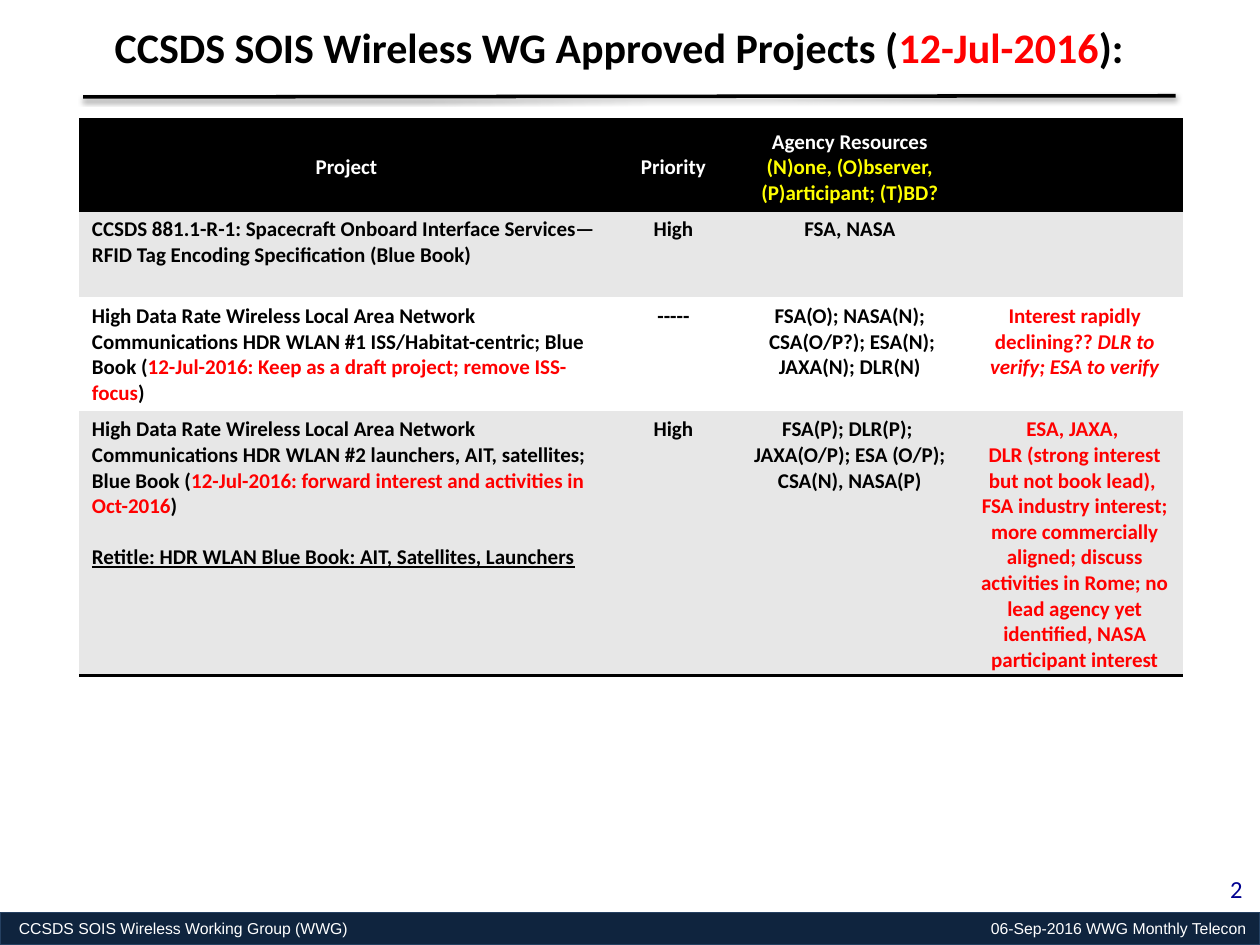
import pptx
import pptx.util
import pptx.dml.color
import pptx.enum.shapes
import pptx.enum.text
import pptx.oxml
import pptx.oxml.ns

Inches = pptx.util.Inches
Pt = pptx.util.Pt
ALIGN = pptx.enum.text.PP_ALIGN
ANCHOR = pptx.enum.text.MSO_ANCHOR
NAMESPACE = pptx.oxml.ns.nsdecls("a")

COLORS = {
    "black": "000000", "white": "FFFFFF", "red": "FF0000", "yellow": "FFFF00",
    "band": "E7E7E7", "navy": "0F243E", "edge": "254061", "number": "000090",
}
NO_STYLE = "{2D5ABB26-0587-4C30-8999-92F81FD0307C}"
COLUMN_WIDTHS = [4.24, 0.95, 1.85, 1.72]
ROW_HEIGHTS = [0.72, 0.69, 0.9, 2.1]

RED = {"color": "red"}
HEADER = [
    [["Project"]],
    [["Priority"]],
    [["Agency Resources"],
     [("(N)one, (O)bserver, (P)articipant; (T)BD?", {"color": "yellow"})]],
    [],
]
PROJECTS = [
    [
        [["CCSDS 881.1-R-1: Spacecraft Onboard Interface Services—"
          "RFID Tag Encoding Specification (Blue Book)"]],
        [["High"]],
        [["FSA, NASA"]],
        [],
    ],
    [
        [["High Data Rate Wireless Local Area Network Communications "
          "HDR WLAN #1 ISS/Habitat-centric; Blue Book (",
          ("12-Jul-2016: Keep as a draft project; remove ISS-focus", RED), ")"]],
        [["-----"]],
        [["FSA(O); NASA(N);"], [" CSA(O/P?); ESA(N); JAXA(N); DLR(N)"]],
        [[("Interest rapidly declining?? ", RED),
          ("DLR to verify; ESA to verify", {"color": "red", "italic": True})]],
    ],
    [
        [["High Data Rate Wireless Local Area Network Communications "
          "HDR WLAN #2 launchers, AIT, satellites; Blue Book (",
          ("12-Jul-2016: forward interest and activities in Oct-2016", RED), ")"],
         [("Retitle: HDR WLAN Blue Book: AIT, Satellites, Launchers",
           {"underline": True})]],
        [["High"]],
        [["FSA(P); DLR(P); "], ["JAXA(O/P); ESA (O/P); CSA(N), NASA(P)"]],
        [[("ESA, JAXA, ", RED)],
         [("DLR (strong interest but not book lead), ", RED)],
         [("FSA industry interest; more commercially aligned; discuss activities "
           "in Rome; no lead agency yet identified, NASA participant interest", RED)]],
    ],
]


def rgb(name):
    return pptx.dml.color.RGBColor.from_string(COLORS[name])


class Page:
    def __init__(self, deck):
        self.slide = deck.slides.add_slide(deck.slide_layouts[5])
        self.style = {"name": "Calibri", "size": Pt(12), "bold": True, "color": "black"}

    def fill_text(self, frame, paragraphs, align, gap=0, **changes):
        for index, pieces in enumerate(paragraphs):
            para = frame.paragraphs[0] if index == 0 else frame.add_paragraph()
            para.alignment = align
            para.space_before = Pt(gap if index else 0)
            for piece in pieces:
                words, extra = (piece, {}) if isinstance(piece, str) else piece
                span = para.add_run()
                span.text = words
                for key, value in {**self.style, **changes, **extra}.items():
                    if key == "color":
                        span.font.color.rgb = rgb(value)
                    else:
                        setattr(span.font, key, value)

    def frame(self, box, **values):
        for key, value in values.items():
            setattr(box.text_frame, key, value)
        return box.text_frame

    def title(self, pieces, left, top, width, height):
        box = self.slide.shapes.title
        box.left, box.top, box.width, box.height = map(Inches, (left, top, width, height))
        frame = self.frame(box, word_wrap=False, vertical_anchor=ANCHOR.MIDDLE)
        self.fill_text(frame, [pieces], ALIGN.LEFT, size=Pt(24))

    def rule(self, start, end):
        line = self.slide.shapes.add_connector(
            pptx.enum.shapes.MSO_CONNECTOR.STRAIGHT, *map(Inches, start + end))
        line.line.color.rgb = rgb("black")
        line.line.width = Pt(2)
        line._element.spPr.append(pptx.oxml.parse_xml(
            f'<a:effectLst {NAMESPACE}><a:outerShdw blurRad="{Pt(3.1)}" dist="{Pt(1.6)}" '
            f'dir="5400000" rotWithShape="0"><a:srgbClr val="{COLORS["black"]}">'
            '<a:alpha val="38000"/></a:srgbClr></a:outerShdw></a:effectLst>'))

    def number(self, words, left, top, width, height):
        box = self.slide.shapes.add_textbox(*map(Inches, (left, top, width, height)))
        frame = self.frame(box, word_wrap=True, vertical_anchor=ANCHOR.MIDDLE)
        self.fill_text(frame, [[words]], ALIGN.RIGHT, size=Pt(14), bold=False,
                       color="number")

    def footer(self, left_words, right_words, left, top, width, height):
        bar = self.slide.shapes.add_shape(
            pptx.enum.shapes.MSO_SHAPE.RECTANGLE, *map(Inches, (left, top, width, height)))
        bar.shadow.inherit = False
        bar.fill.solid()
        bar.fill.fore_color.rgb = rgb("navy")
        bar.line.color.rgb = rgb("edge")
        bar.line.width = Pt(0.75)
        frame = self.frame(bar, word_wrap=True, vertical_anchor=ANCHOR.MIDDLE,
                           margin_left=Inches(0.15), margin_right=Inches(0.05),
                           margin_top=0, margin_bottom=0)
        properties = frame.paragraphs[0]._p.get_or_add_pPr()
        properties.append(pptx.oxml.parse_xml(
            f'<a:tabLst {NAMESPACE}><a:tab pos="{Inches(width - 0.26)}" algn="r"/></a:tabLst>'))
        self.fill_text(frame, [[f"{left_words}\t{right_words}"]], ALIGN.LEFT,
                       name="Arial", size=Pt(9), bold=False, color="white")

    def border(self, cell, sides):
        properties = cell._tc.get_or_add_tcPr()
        for index, side in enumerate(sides):
            properties.insert(index, pptx.oxml.parse_xml(
                f'<a:ln{side} {NAMESPACE} w="{Pt(2)}"><a:solidFill>'
                f'<a:srgbClr val="{COLORS["black"]}"/></a:solidFill></a:ln{side}>'))

    def table(self, rows, left, top):
        size = (sum(COLUMN_WIDTHS), sum(ROW_HEIGHTS))
        holder = self.slide.shapes.add_table(
            len(rows), len(COLUMN_WIDTHS), *map(Inches, (left, top) + size))
        grid = holder.table
        grid._tbl.tblPr.find(pptx.oxml.ns.qn("a:tableStyleId")).text = NO_STYLE
        for column, width in zip(grid.columns, COLUMN_WIDTHS):
            column.width = Inches(width)
        for index, (row, contents) in enumerate(zip(grid.rows, rows)):
            row.height = Inches(ROW_HEIGHTS[index])
            header = index == 0
            fill = "black" if header else ("band" if index % 2 else "white")
            for place, (cell, paragraphs) in enumerate(zip(row.cells, contents)):
                cell.fill.solid()
                cell.fill.fore_color.rgb = rgb(fill)
                cell.margin_top, cell.margin_bottom = Inches(0.05), Inches(0.01)
                cell.vertical_anchor = ANCHOR.MIDDLE if header else ANCHOR.TOP
                listing = place == 0 and not header
                self.fill_text(cell.text_frame, paragraphs,
                               ALIGN.LEFT if listing else ALIGN.CENTER,
                               gap=14.65 if listing else 0,
                               color="white" if header else "black")
                if header:
                    self.border(cell, "TB")
                elif index == len(rows) - 1:
                    self.border(cell, "B")


def main():
    deck = pptx.Presentation()
    deck.slide_width, deck.slide_height = Inches(10), Inches(7.5)
    page = Page(deck)
    page.number("2", 9.3, 6.88, 0.66, 0.35)
    page.footer("CCSDS SOIS Wireless Working Group (WWG)",
                "06-Sep-2016 WWG Monthly Telecon", 0, 7.24, 10, 0.26)
    page.table([HEADER] + PROJECTS, 0.63, 0.95)
    page.title(["CCSDS SOIS Wireless WG Approved Projects (", ("12-Jul-2016", RED), "):"],
               0.81, 0.12, 8.4, 0.5)
    page.rule((0.66, 0.77), (9.33, 0.76))
    deck.save("out.pptx")


if __name__ == "__main__":
    main()
